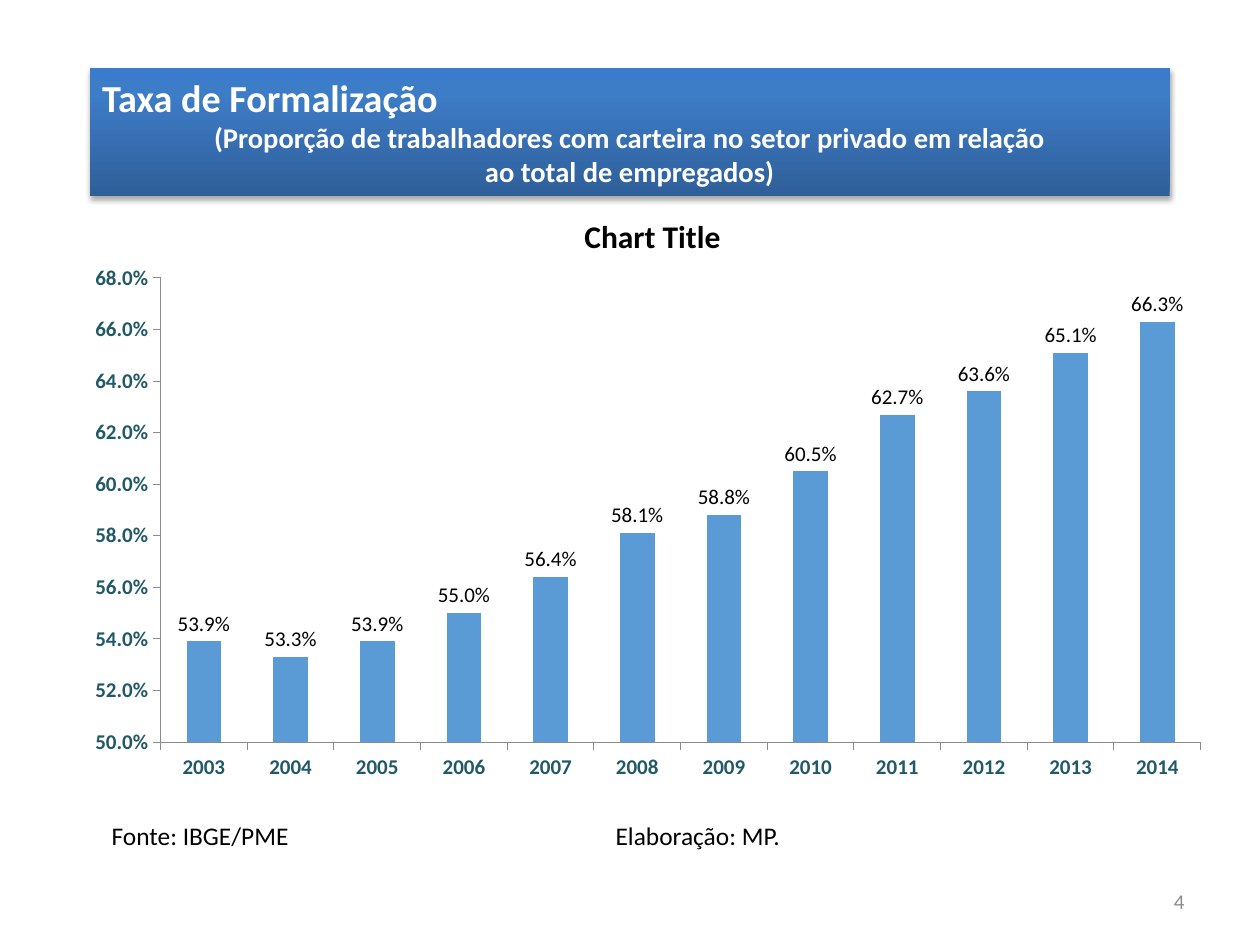
import pptx
import pptx.chart.data
import pptx.dml.color
import pptx.enum.chart
import pptx.enum.shapes
import pptx.enum.text
import pptx.oxml
import pptx.oxml.ns
import pptx.util
from pptx.util import Cm

COLORS = {
    "black": "000000",
    "white": "FFFFFF",
    "bar": "5B9BD5",
    "axis_text": "215968",
    "axis_line": "8B8B8B",
    "page_number": "8C8C8C",
    "banner_dark": "2F5F99",
    "banner_mid": "3D7CC7",
    "banner_light": "3A7CCB",
}
NAMESPACE = pptx.oxml.ns.nsdecls("a")
C_NAMESPACE = pptx.oxml.ns.nsdecls("c")


def style_font(font, size, color, bold=False):
    font.name = "Calibri"
    font.size = pptx.util.Pt(size)
    font.bold = bold
    font.color.rgb = pptx.dml.color.RGBColor.from_string(COLORS[color])


def add_run(paragraph, text, size, color, bold=False):
    run = paragraph.add_run()
    run.text = text
    style_font(run.font, size, color, bold)


presentation = pptx.Presentation()
presentation.slide_width = Cm(25.4)
presentation.slide_height = Cm(19.05)
slide = presentation.slides.add_slide(presentation.slide_layouts[6])

rates = [0.539, 0.533, 0.539, 0.55, 0.564, 0.581, 0.588, 0.605, 0.627, 0.636, 0.651, 0.663]
chart_data = pptx.chart.data.CategoryChartData(number_format="0.0%")
chart_data.categories = [str(year) for year in range(2003, 2015)]
chart_data.add_series("Series 1", rates)
chart = slide.shapes.add_chart(
    pptx.enum.chart.XL_CHART_TYPE.COLUMN_CLUSTERED,
    Cm(1.45), Cm(3.58), Cm(23.22), Cm(12.4), chart_data,
).chart
style_font(chart.font, 10, "black")
chart.has_legend = False
chart.has_title = True
add_run(chart.chart_title.text_frame.paragraphs[0], "Chart Title", 18, "black", True)
chart.chart_title.include_in_layout = False

title_layout = pptx.oxml.parse_xml(
    f'<c:layout {C_NAMESPACE}><c:manualLayout><c:xMode val="edge"/><c:yMode val="edge"/>'
    '<c:x val="0.44"/><c:y val="0.05"/></c:manualLayout></c:layout>'
)
plot_layout = pptx.oxml.parse_xml(
    f'<c:layout {C_NAMESPACE}><c:manualLayout><c:layoutTarget val="inner"/>'
    '<c:xMode val="edge"/><c:yMode val="edge"/><c:x val="0.077"/><c:y val="0.163"/>'
    '<c:w val="0.903"/><c:h val="0.755"/></c:manualLayout></c:layout>'
)
title_element = chart._chartSpace.find(".//" + pptx.oxml.ns.qn("c:title"))
plot_element = chart._chartSpace.find(".//" + pptx.oxml.ns.qn("c:plotArea"))
for element, layout, index in [(title_element, title_layout, 1), (plot_element, plot_layout, 0)]:
    for old_layout in element.findall(pptx.oxml.ns.qn("c:layout")):
        element.remove(old_layout)
    element.insert(index, layout)

for axis in (chart.category_axis, chart.value_axis):
    axis.has_major_gridlines = False
    axis.major_tick_mark = pptx.enum.chart.XL_TICK_MARK.OUTSIDE
    axis.format.line.width = pptx.util.Pt(0.5)
    axis.format.line.color.rgb = pptx.dml.color.RGBColor.from_string(COLORS["axis_line"])
    style_font(axis.tick_labels.font, 12, "axis_text", True)
chart.value_axis.minimum_scale = 0.5
chart.value_axis.maximum_scale = 0.68
chart.value_axis.major_unit = 0.02
chart.value_axis.tick_labels.number_format = "0.0%"
chart.value_axis.tick_labels.number_format_is_linked = False

plot = chart.plots[0]
plot.gap_width = 150
plot.vary_by_categories = False
series = plot.series[0]
series.format.fill.solid()
series.format.fill.fore_color.rgb = pptx.dml.color.RGBColor.from_string(COLORS["bar"])
labels = series.data_labels
labels.show_value = True
labels.number_format = "0.0%"
labels.number_format_is_linked = False
labels.position = pptx.enum.chart.XL_LABEL_POSITION.OUTSIDE_END
style_font(labels.font, 12, "black")

source_box = slide.shapes.add_textbox(Cm(2), Cm(16.41), Cm(21.6), Cm(0.92))
source_box.text_frame.word_wrap = True
paragraph = source_box.text_frame.paragraphs[0]
add_run(paragraph, "Fonte: IBGE/PME\tElaboração: MP.", 14.5, "black")
paragraph._p.get_or_add_pPr().append(pptx.oxml.parse_xml(
    f'<a:tabLst {NAMESPACE}><a:tab pos="{Cm(10.16)}" algn="l"/></a:tabLst>'
))

banner = slide.shapes.add_shape(
    pptx.enum.shapes.MSO_SHAPE.RECTANGLE, Cm(1.81), Cm(1.37), Cm(21.77), Cm(2.59)
)
banner.line.fill.background()
banner.fill.gradient()
banner.fill.gradient_angle = 90
stops = banner._element.spPr.find(".//" + pptx.oxml.ns.qn("a:gsLst"))
for stop in list(stops):
    stops.remove(stop)
for position, color in [(0, "banner_dark"), (80, "banner_mid"), (100, "banner_light")]:
    stops.append(pptx.oxml.parse_xml(
        f'<a:gs {NAMESPACE} pos="{position * 1000}"><a:srgbClr val="{COLORS[color]}"/></a:gs>'
    ))
banner.shadow.inherit = False
banner._element.spPr.find(pptx.oxml.ns.qn("a:effectLst")).append(pptx.oxml.parse_xml(
    f'<a:outerShdw {NAMESPACE} blurRad="{pptx.util.Pt(3.1)}" dist="{pptx.util.Pt(1.8)}" '
    f'dir="5400000" rotWithShape="0"><a:srgbClr val="{COLORS["black"]}">'
    '<a:alpha val="35000"/></a:srgbClr></a:outerShdw>'
))
banner_frame = banner.text_frame
banner_frame.word_wrap = True
banner_frame.vertical_anchor = pptx.enum.text.MSO_ANCHOR.TOP
heading = banner_frame.paragraphs[0]
heading.alignment = pptx.enum.text.PP_ALIGN.LEFT
add_run(heading, "Taxa de Formalização", 21.8, "white", True)
subtitle = banner_frame.add_paragraph()
subtitle.alignment = pptx.enum.text.PP_ALIGN.CENTER
add_run(subtitle, "(Proporção de trabalhadores com carteira no setor privado em relação", 16.3, "white", True)
subtitle.add_line_break()
add_run(subtitle, "ao total de empregados)", 16.3, "white", True)

number_box = slide.shapes.add_textbox(Cm(18.21), Cm(17.65), Cm(5.92), Cm(1.02))
number_box.text_frame.word_wrap = True
number_box.text_frame.vertical_anchor = pptx.enum.text.MSO_ANCHOR.MIDDLE
paragraph = number_box.text_frame.paragraphs[0]
paragraph.alignment = pptx.enum.text.PP_ALIGN.RIGHT
add_run(paragraph, "4", 12, "page_number")

presentation.save("out.pptx")
